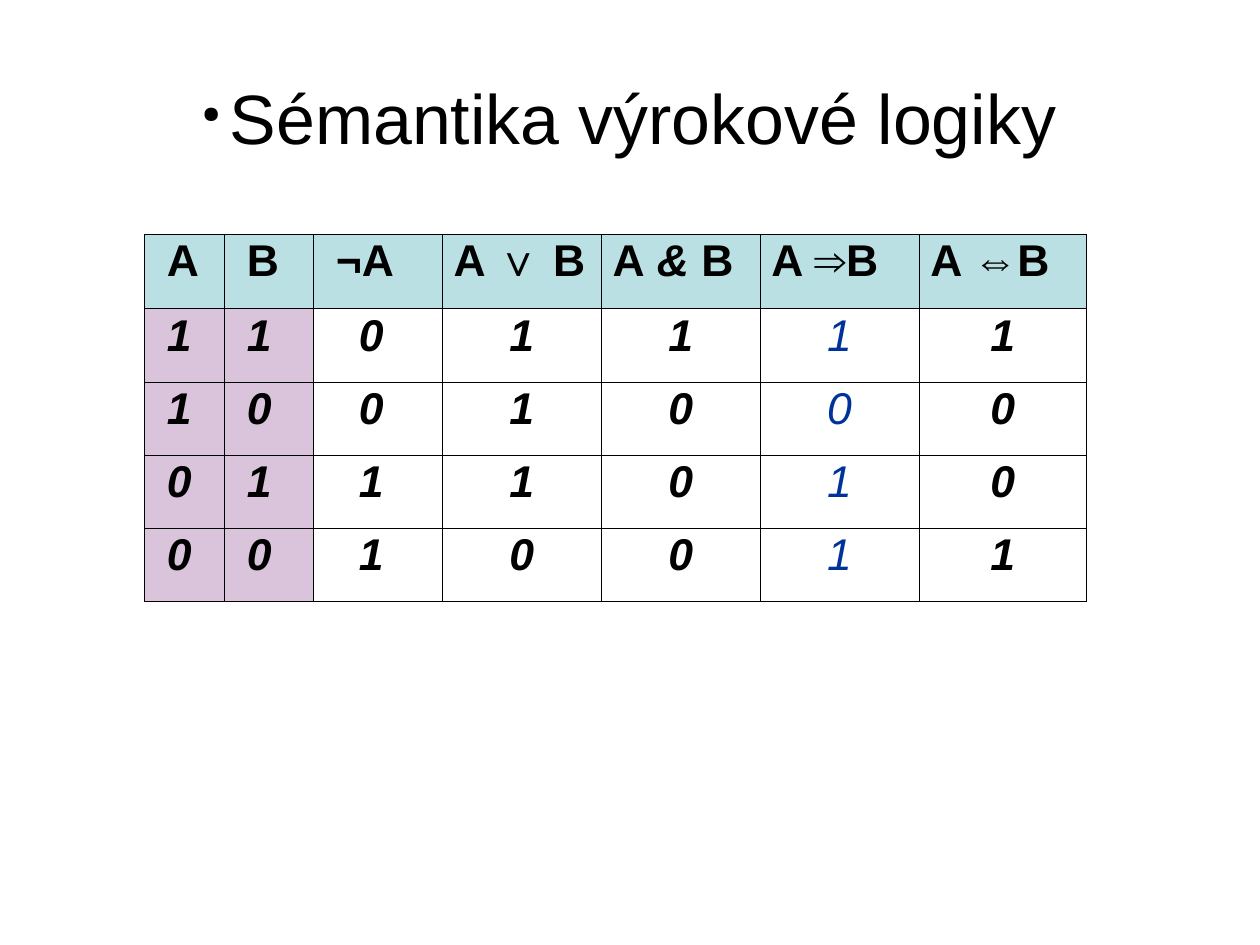
from itertools import product

from lxml import etree
from pptx import Presentation
from pptx import util as u
from pptx.dml.color import RGBColor
from pptx.enum import text
from pptx.oxml.ns import qn

COLORS = {"ink": "000000", "header": "BBE0E3", "input": "DAC4DB",
          "result": "FFFFFF", "accent": "003399"}
THIN, THICK = 0.23, 0.5
SPACE = 0.1  # width of one space at the table's text size


def add_run(paragraph, content, size=28, bold=True, italic=False, color="ink"):
    run = paragraph.add_run()
    run.text = content
    font = run.font
    font.name, font.size = "Arial", u.Pt(size)
    font.bold, font.italic = bold, italic
    font.color.rgb = RGBColor.from_string(COLORS[color])


def set_borders(cell, widths):
    """Draw left, right, top and bottom lines with the given widths in points."""
    properties = cell._tc.get_or_add_tcPr()
    for position, (side, width) in enumerate(zip("LRTB", widths)):
        line = etree.Element(qn(f"a:ln{side}"), w=str(u.Pt(width)))
        fill = etree.SubElement(line, qn("a:solidFill"))
        etree.SubElement(fill, qn("a:srgbClr"), val=COLORS["ink"])
        properties.insert(position, line)


presentation = Presentation()
presentation.slide_width = u.Cm(28)
presentation.slide_height = u.Cm(21)
slide = presentation.slides.add_slide(presentation.slide_layouts[5])

# Title with a small round bullet
title = slide.shapes.title
title.left, title.top = u.Inches(0.55), u.Inches(0.33)
title.width, title.height = u.Inches(9.92), u.Inches(1.38)
title.text_frame.auto_size = text.MSO_AUTO_SIZE.NONE
title.text_frame.vertical_anchor = text.MSO_ANCHOR.MIDDLE
paragraph = title.text_frame.paragraphs[0]
paragraph.alignment = text.PP_ALIGN.CENTER
add_run(paragraph, "Sémantika výrokové logiky", size=44, bold=False)
properties = paragraph._p.get_or_add_pPr()
properties.set("marL", str(u.Inches(0.24)))
properties.set("indent", str(u.Inches(-0.24)))
bullet_color = etree.SubElement(properties, qn("a:buClr"))
etree.SubElement(bullet_color, qn("a:srgbClr"), val=COLORS["ink"])
etree.SubElement(properties, qn("a:buSzPct"), val="33000")
etree.SubElement(properties, qn("a:buChar"), char="●")

# Truth table: each cell is a list of (text, format) runs
ITALIC, LIGHT = {"italic": True}, {"bold": False}
rows = [[
    [("A", {})],
    [("B", {})],
    [("¬", ITALIC), ("A", {})],
    [("A ", {}), ("∨ ", ITALIC), ("B", {})],
    [("A", {}), (" & ", ITALIC), ("B", {})],
    [("A ", {}), ("⇒", LIGHT), ("B", {})],
    [("A ", {}), ("⇔", LIGHT), ("B", {})],
]]
IMPLICATION = 5
for a, b in product((1, 0), repeat=2):
    values = [a, b, 1 - a, a | b, a & b, (1 - a) | b, int(a == b)]
    rows.append([
        [(str(value), {"italic": True, "bold": column != IMPLICATION,
                       "color": "accent" if column == IMPLICATION else "ink"})]
        for column, value in enumerate(values)])

column_widths = [0.7, 0.78, 1.13, 1.39, 1.39, 1.39, 1.47]
row_heights = [0.65] + [0.64] * 4
last_row, last_column = len(row_heights) - 1, len(column_widths) - 1
table = slide.shapes.add_table(
    len(row_heights), len(column_widths), u.Inches(1.26), u.Inches(2.05),
    u.Inches(sum(column_widths)), u.Inches(sum(row_heights))).table
table.first_row = table.horz_banding = False
for column, width in zip(table.columns, column_widths):
    column.width = u.Inches(width)
for row, height in zip(table.rows, row_heights):
    row.height = u.Inches(height)

for row, cells in enumerate(rows):
    for column, runs in enumerate(cells):
        cell = table.cell(row, column)
        paragraph = cell.text_frame.paragraphs[0]
        paragraph.line_spacing = 0.93
        if row and column > 2:
            paragraph.alignment = text.PP_ALIGN.CENTER
        elif column <= 2:
            spaces = 3 if row and column == 2 else 1
            cell.margin_left = u.Inches(0.1 + spaces * SPACE)
        for content, style in runs:
            add_run(paragraph, content, **style)

        fill = "header" if row == 0 else "input" if column < 2 else "result"
        cell.fill.solid()
        cell.fill.fore_color.rgb = RGBColor.from_string(COLORS[fill])
        heavy = (column == 0, column == last_column, row <= 1, row in (0, last_row))
        set_borders(cell, [THICK if edge else THIN for edge in heavy])

presentation.save("out.pptx")
